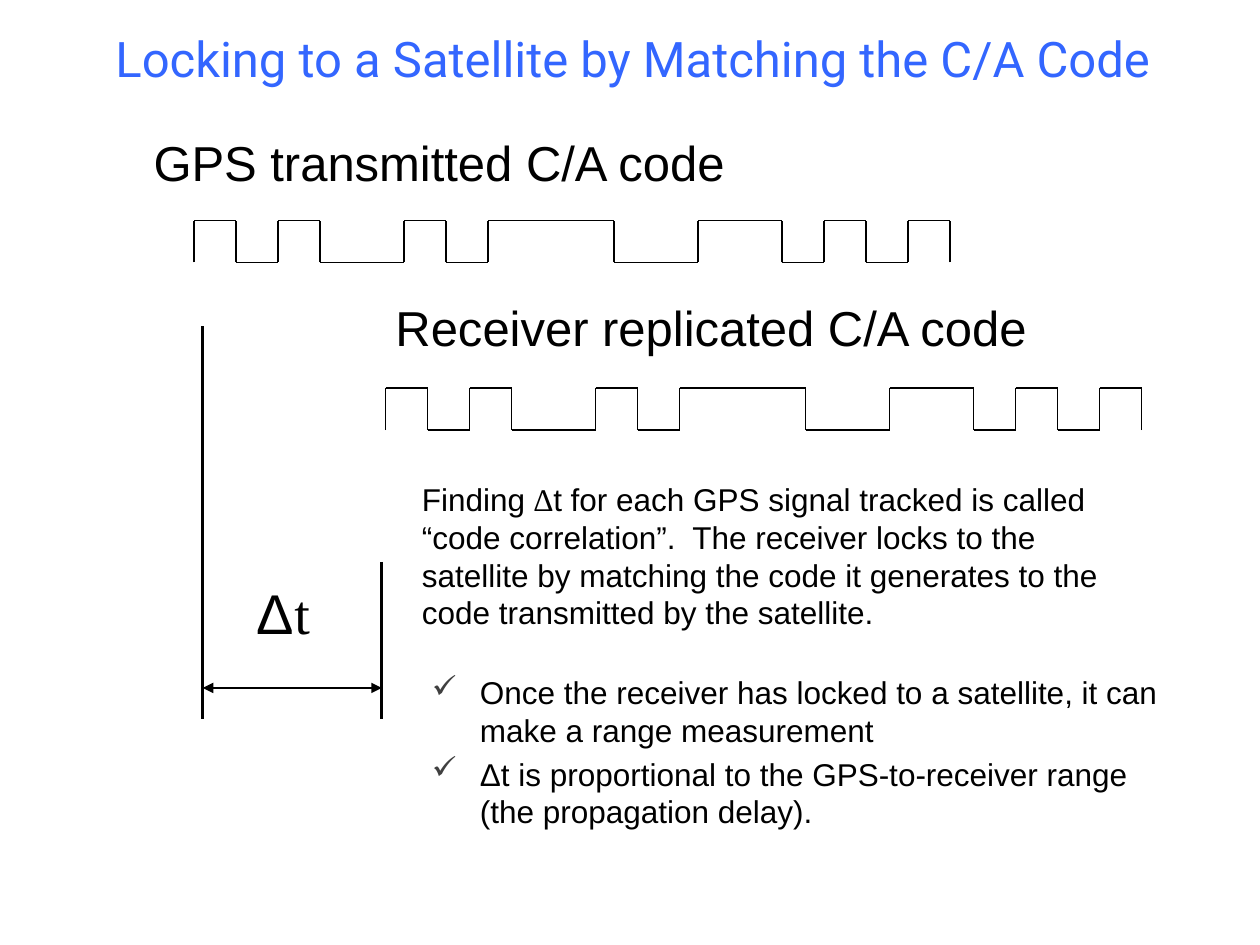
from itertools import groupby

from lxml import etree
from pptx import Presentation
from pptx.dml.color import RGBColor
from pptx.enum.shapes import MSO_CONNECTOR
from pptx.enum.text import MSO_ANCHOR, PP_ALIGN
from pptx.oxml.ns import qn
from pptx.util import Inches, Pt

STRAIGHT = MSO_CONNECTOR.STRAIGHT
MIDDLE = MSO_ANCHOR.MIDDLE
CENTER = PP_ALIGN.CENTER
COLORS = {"title": "3366FF", "ink": "000000", "bullet": "404040"}
SANS, SERIF, HEADING = "Arial", "Times New Roman", "Roboto"
CODE = "101001011100110101"
CHIP = 1 / 3


class Deck:
    """Holds the style and the current slide, with a method per element."""

    def __init__(self, prs):
        self.s = prs.slides.add_slide(prs.slide_layouts[5])

    def style(self, r, size, font=SANS, color="ink"):
        r.font.size = Pt(size)
        r.font.name = font
        r.font.color.rgb = RGBColor.from_string(COLORS[color])

    def place(self, sp, x, y, w, h):
        sp.left, sp.top, sp.width, sp.height = map(Inches, (x, y, w, h))

    def title(self, text, box):
        sp = self.s.shapes.title
        self.place(sp, *box)
        tf = sp.text_frame
        tf.text = text
        tf.vertical_anchor = MIDDLE
        p = tf.paragraphs[0]
        p.alignment = CENTER
        self.style(p.runs[0], 28, HEADING, "title")

    def text(self, box, size, *paragraphs):
        tf = self.s.shapes.add_textbox(*map(Inches, box)).text_frame
        tf.word_wrap = True
        for i, runs in enumerate(paragraphs):
            p = tf.add_paragraph() if i else tf.paragraphs[0]
            for text, font in runs:
                r = p.add_run()
                r.text = text
                self.style(r, size, font)
        return tf

    def checklist(self, box, size, items):
        tf = self.text(box, size, *[[(item, SANS)] for item in items])
        for p in tf.paragraphs:
            p.space_before = Pt(0.2 * size)
            pPr = p._p.get_or_add_pPr()
            pPr.set("marL", str(Inches(0.38)))
            pPr.set("indent", str(-Inches(0.38)))
            color = etree.SubElement(pPr, qn("a:buClr"))
            etree.SubElement(color, qn("a:srgbClr"), val=COLORS["bullet"])
            etree.SubElement(pPr, qn("a:buChar"), char="✓")

    def line(self, x1, y1, x2, y2, width, arrows=False, shapes=None):
        shapes = shapes or self.s.shapes
        c = shapes.add_connector(STRAIGHT, *map(Inches, (x1, y1, x2, y2)))
        c.line.width = Pt(width)
        c.line.color.rgb = RGBColor.from_string(COLORS["ink"])
        if arrows:
            ln = c.line._get_or_add_ln()
            for end in ("a:headEnd", "a:tailEnd"):
                etree.SubElement(ln, qn(end), type="triangle")
        etree.SubElement(c._element.spPr, qn("a:effectLst"))

    def wave(self, x, top, bits):
        shapes = self.s.shapes.add_group_shape().shapes
        bottom = top + CHIP
        self.line(x, bottom, x, top, 1, shapes=shapes)
        for bit, run in groupby(bits):
            y = top if bit == "1" else bottom
            for _ in run:
                self.line(x, y, x + CHIP, y, 1, shapes=shapes)
                x += CHIP
            self.line(x, bottom, x, top, 1, shapes=shapes)


def main():
    prs = Presentation()
    prs.slide_width, prs.slide_height = Inches(10), Inches(7.5)
    deck = Deck(prs)
    deck.title("Locking to a Satellite by Matching the C/A Code", (0.29, 0.17, 9.46, 0.58))

    deck.wave(1.54, 1.75, CODE)
    deck.wave(3.06, 3.08, CODE)

    sent, received, arrow_y, foot = 1.61, 3.03, 5.46, 5.71
    deck.line(sent, 2.59, sent, foot, 1.75)
    deck.line(received, 4.46, received, foot, 1.75)
    deck.line(sent, arrow_y, received, arrow_y, 1.5, arrows=True)

    deck.text((1.94, 4.54, 0.75, 0.63), 32, [("Δ", SANS), ("t", SERIF)])
    deck.text((1.12, 1, 5.08, 0.57), 28, [("GPS transmitted C/A code", SANS)])
    deck.text((3.04, 2.31, 5.68, 0.57), 28, [("Receiver replicated C/A code", SANS)])
    deck.text((3.25, 3.76, 5.92, 1.31), 18, [
        ("Finding ", SANS),
        ("∆", SERIF),
        ("t for each GPS signal tracked is called “code correlation”.  The receiver "
         "locks to the satellite by matching the code it generates to the code "
         "transmitted by the satellite.", SANS),
    ])
    deck.checklist((3.33, 5.29, 6.12, 1.03), 18, [
        "Once the receiver has locked to a satellite, it can make a range measurement",
        "Δt is proportional to the GPS-to-receiver range (the propagation delay).",
    ])
    prs.save("out.pptx")


if __name__ == "__main__":
    main()
